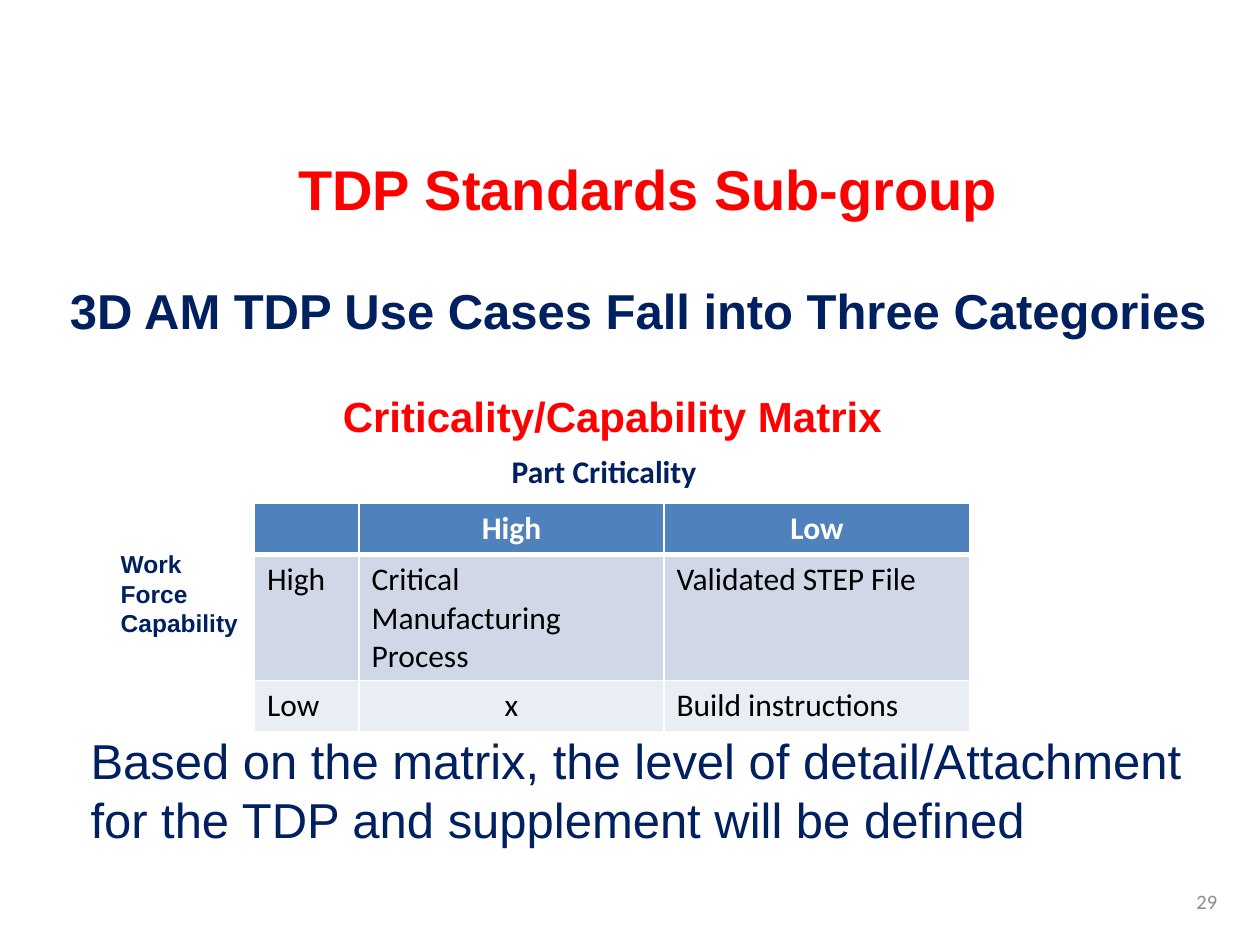
"""Build the TDP Standards Sub-group slide with its criticality/capability matrix."""
from lxml import etree
from pptx import Presentation
from pptx.dml.color import RGBColor
from pptx.enum.text import MSO_ANCHOR, MSO_AUTO_SIZE, PP_ALIGN
from pptx.oxml.ns import qn
from pptx.util import Inches, Pt

LEFT, CENTER, RIGHT = PP_ALIGN.LEFT, PP_ALIGN.CENTER, PP_ALIGN.RIGHT
TOP, MIDDLE = MSO_ANCHOR.TOP, MSO_ANCHOR.MIDDLE
NO_AUTOFIT = MSO_AUTO_SIZE.NONE
THEME = {
    "red": "FF0000", "navy": "002060", "gray": "8C8C8C", "white": "FFFFFF", "black": "000000",
    "header": "4F81BD", "bands": ["D0D8E8", "E9EDF4"],
    "title": 32, "statement": 28, "subtitle": 24, "table": 18, "axis": 14, "number": 11.7,
}


def write_lines(text_frame, lines, alignment, **font_format):
    text_frame.text = "\n".join(lines)
    for paragraph in text_frame.paragraphs:
        paragraph.alignment = alignment
        for name, value in font_format.items():
            if name == "color":
                paragraph.font.color.rgb = RGBColor.from_string(THEME[value])
            else:
                setattr(paragraph.font, name, Pt(THEME[value]) if name == "size" else value)


def set_border(cell, side, width):
    line = etree.SubElement(cell._tc.get_or_add_tcPr(), qn(f"a:ln{side}"), w=str(Pt(width)))
    fill = etree.SubElement(line, qn("a:solidFill"))
    etree.SubElement(fill, qn("a:srgbClr"), val=THEME["white"])


presentation = Presentation()
presentation.slide_width, presentation.slide_height = Inches(10), Inches(7.5)
slide = presentation.slides.add_slide(presentation.slide_layouts[5])

title = slide.shapes.title
title.left, title.top, title.width, title.height = map(Inches, (1.86, 1.17, 6.57, 0.64))
title.text_frame.auto_size = NO_AUTOFIT
write_lines(title.text_frame, ["TDP Standards Sub-group"], CENTER,
            name="Arial", size="title", color="red", bold=True)

texts = [
    ((0.25, 2.18, 9.63, 0.57), ["3D AM TDP Use Cases Fall into Three Categories"], CENTER, TOP,
     {"name": "Arial", "size": "statement", "color": "navy", "bold": True}),
    ((2.6, 3.05, 4.52, 0.5), ["Criticality/Capability Matrix"], CENTER, TOP,
     {"name": "Arial", "size": "subtitle", "color": "red", "bold": True}),
    ((2.46, 3.54, 4.67, 0.4), ["Part Criticality"], CENTER, TOP,
     {"name": "Calibri", "size": "table", "color": "navy", "bold": True}),
    ((0.86, 4.31, 1.16, 0.78), ["Work", "Force", "Capability"], LEFT, TOP,
     {"name": "Arial", "size": "axis", "color": "navy", "bold": True}),
    ((0.62, 5.75, 9.05, 1.04),
     ["Based on the matrix, the level of detail/Attachment for the TDP and supplement will be defined"],
     LEFT, TOP, {"name": "Arial", "size": "statement", "color": "navy"}),
    ((7.43, 6.95, 2.33, 0.4), ["29"], RIGHT, MIDDLE,
     {"name": "Calibri", "size": "number", "color": "gray"}),
]
for position, lines, alignment, anchor, font_format in texts:
    text_frame = slide.shapes.add_textbox(*map(Inches, position)).text_frame
    text_frame.word_wrap = True
    text_frame.vertical_anchor = anchor
    write_lines(text_frame, lines, alignment, **font_format)

matrix = [
    ["", "High", "Low"],
    ["High", "Critical Manufacturing Process", "Validated STEP File"],
    ["Low", "x", "Build instructions"],
]
table = slide.shapes.add_table(3, 3, *map(Inches, (2.02, 3.99, 5.68, 1.81))).table
for column, width in zip(table.columns, (0.83, 2.42, 2.43)):
    column.width = Inches(width)
for row, height in zip(table.rows, (0.41, 0.99, 0.41)):
    row.height = Inches(height)

for row_index, values in enumerate(matrix):
    is_header = row_index == 0
    for column_index, value in enumerate(values):
        cell = table.cell(row_index, column_index)
        for side in "LRTB":
            is_header_rule = (row_index, side) in [(0, "B"), (1, "T")]
            set_border(cell, side, 3 if is_header_rule else 1)
        cell.fill.solid()
        fill_color = THEME["header"] if is_header else THEME["bands"][row_index - 1]
        cell.fill.fore_color.rgb = RGBColor.from_string(fill_color)
        write_lines(cell.text_frame, [value], CENTER if is_header or value == "x" else LEFT,
                    name="Calibri", size="table", bold=is_header,
                    color="white" if is_header else "black")

presentation.save("out.pptx")
